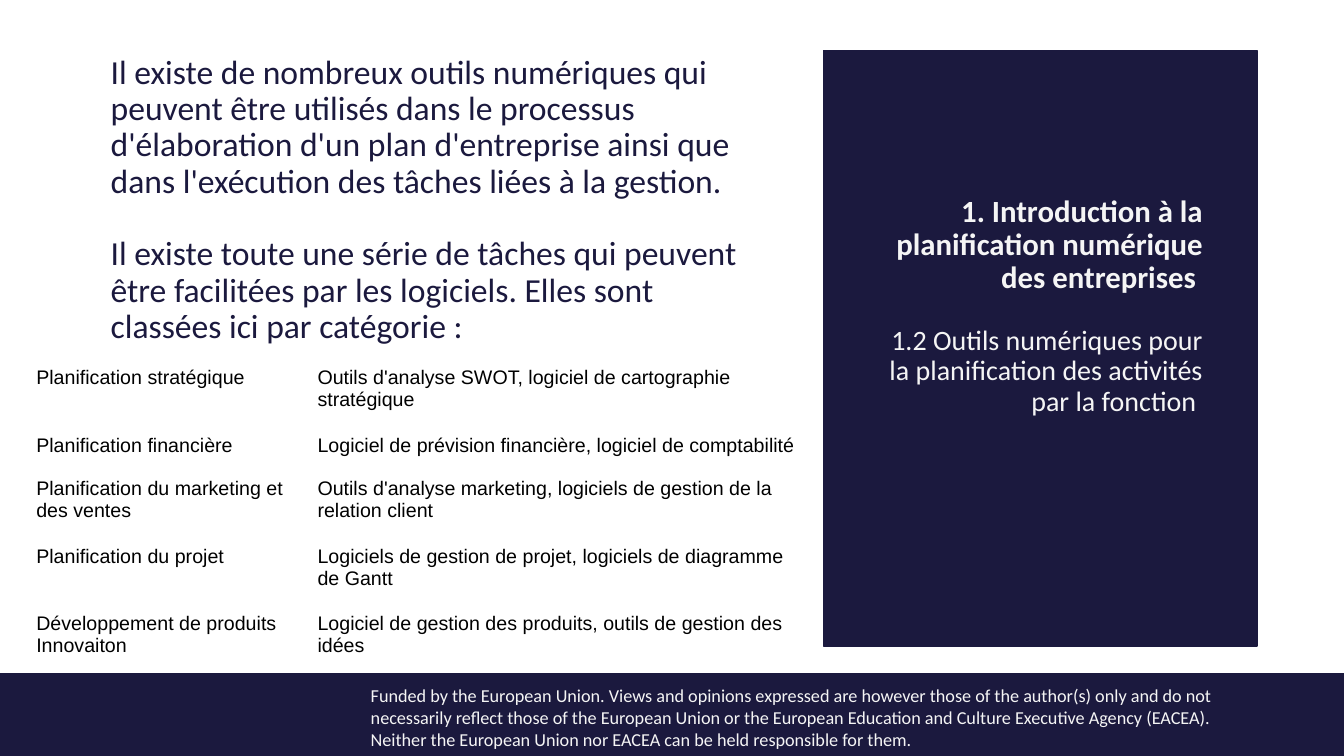
from dataclasses import dataclass

from pptx import Presentation
from pptx.dml.color import RGBColor
from pptx.enum.shapes import MSO_SHAPE
from pptx.enum.text import MSO_ANCHOR, PP_ALIGN
from pptx.util import Pt


@dataclass(frozen=True)
class Theme:
    """Colours, fonts and type sizes of the slide."""
    navy: RGBColor = RGBColor(0x1B, 0x19, 0x3E)
    pale: RGBColor = RGBColor(0xF5, 0xF5, 0xF5)
    black: RGBColor = RGBColor(0, 0, 0)
    font: str = "Calibri"
    table_font: str = "Arial"
    body: int = 24
    title: int = 22
    subtitle: int = 20
    cell: int = 14
    footer: int = 13


def write(tf, *texts, size, color, font, bold=False, align=PP_ALIGN.LEFT,
          spacing=1.0, gap=0):
    """Write one paragraph per text in the given format."""
    for i, text in enumerate(texts):
        p = tf.add_paragraph() if i else tf.paragraphs[0]
        p.alignment = align
        p.line_spacing = spacing
        p.space_before = Pt(gap if i else 0)
        r = p.add_run()
        r.text = text
        r.font.size = Pt(size)
        r.font.name = font
        r.font.bold = bold
        r.font.color.rgb = color


class Deck:
    """Holds the theme and the current slide."""

    def __init__(self, s, theme):
        """Keep the slide and its theme."""
        self.s = s
        self.theme = theme

    def rect(self, x, y, w, h):
        """Draw a navy rectangle."""
        sp = self.s.shapes.add_shape(MSO_SHAPE.RECTANGLE, Pt(x), Pt(y), Pt(w), Pt(h))
        sp.shadow.inherit = False
        sp.fill.solid()
        sp.fill.fore_color.rgb = self.theme.navy
        sp.line.color.rgb = self.theme.navy
        sp.line.width = Pt(1)

    def text(self, x, y, w, h, *texts, anchor=MSO_ANCHOR.TOP, **fmt):
        """Place a wrapping text box."""
        tf = self.s.shapes.add_textbox(Pt(x), Pt(y), Pt(w), Pt(h)).text_frame
        tf.word_wrap = True
        tf.vertical_anchor = anchor
        write(tf, *texts, font=self.theme.font, **fmt)

    def table(self, x, y, widths, row_height, rows):
        """Place a plain table without fills."""
        t = self.theme
        table = self.s.shapes.add_table(
            len(rows), len(widths), Pt(x), Pt(y),
            Pt(sum(widths)), Pt(row_height * len(rows))).table
        table.first_row = False
        table.horz_banding = False
        for column, width in zip(table.columns, widths):
            column.width = Pt(width)
        for row, texts in zip(table.rows, rows):
            row.height = Pt(row_height)
            for cell, text in zip(row.cells, texts):
                cell.fill.background()
                cell.margin_left = cell.margin_right = Pt(7.2)
                cell.margin_top = cell.margin_bottom = Pt(7.2)
                write(cell.text_frame, text, size=t.cell, color=t.black,
                      font=t.table_font)


TOOLS = [
    ("Planification stratégique",
     "Outils d'analyse SWOT, logiciel de cartographie stratégique"),
    ("Planification financière",
     "Logiciel de prévision financière, logiciel de comptabilité"),
    ("Planification du marketing et des ventes",
     "Outils d'analyse marketing, logiciels de gestion de la relation client"),
    ("Planification du projet",
     "Logiciels de gestion de projet, logiciels de diagramme de Gantt"),
    ("Développement de produits Innovaiton",
     "Logiciel de gestion des produits, outils de gestion des idées"),
]


def main():
    """Build and save the slide."""
    prs = Presentation()
    prs.slide_width, prs.slide_height = Pt(960), Pt(540)
    t = Theme()
    deck = Deck(prs.slides.add_slide(prs.slide_layouts[6]), t)

    deck.rect(0, 481, 960, 59)
    deck.rect(588.24, 36, 309.6, 425.5)
    deck.text(257.76, 485.28, 636.5, 54.7,
              "Funded by the European Union. Views and opinions expressed are "
              "however those of the author(s) only and do not necessarily reflect "
              "those of the European Union or the European Education and Culture "
              "Executive Agency (EACEA). Neither the European Union nor EACEA can "
              "be held responsible for them.",
              size=t.footer, color=t.pale)
    deck.text(619.2, 140.4, 247, 74.2,
              "1. Introduction à la planification numérique des entreprises ",
              anchor=MSO_ANCHOR.BOTTOM, size=t.title, color=t.pale, bold=True,
              align=PP_ALIGN.RIGHT, spacing=0.9)
    deck.text(619.2, 229.7, 247, 202.3,
              "1.2 Outils numériques pour la planification des activités par la "
              "fonction ",
              size=t.subtitle, color=t.pale, align=PP_ALIGN.RIGHT, spacing=0.9)
    deck.text(72, 36, 486, 425.5,
              "Il existe de nombreux outils numériques qui peuvent être utilisés "
              "dans le processus d'élaboration d'un plan d'entreprise ainsi que "
              "dans l'exécution des tâches liées à la gestion.",
              "Il existe toute une série de tâches qui peuvent être facilitées "
              "par les logiciels. Elles sont classées ici par catégorie :",
              size=t.body, color=t.navy, spacing=0.9, gap=26)
    deck.table(18.72, 254.9, (200.9, 355.7), 30, TOOLS)

    prs.save("out.pptx")


if __name__ == "__main__":
    main()
